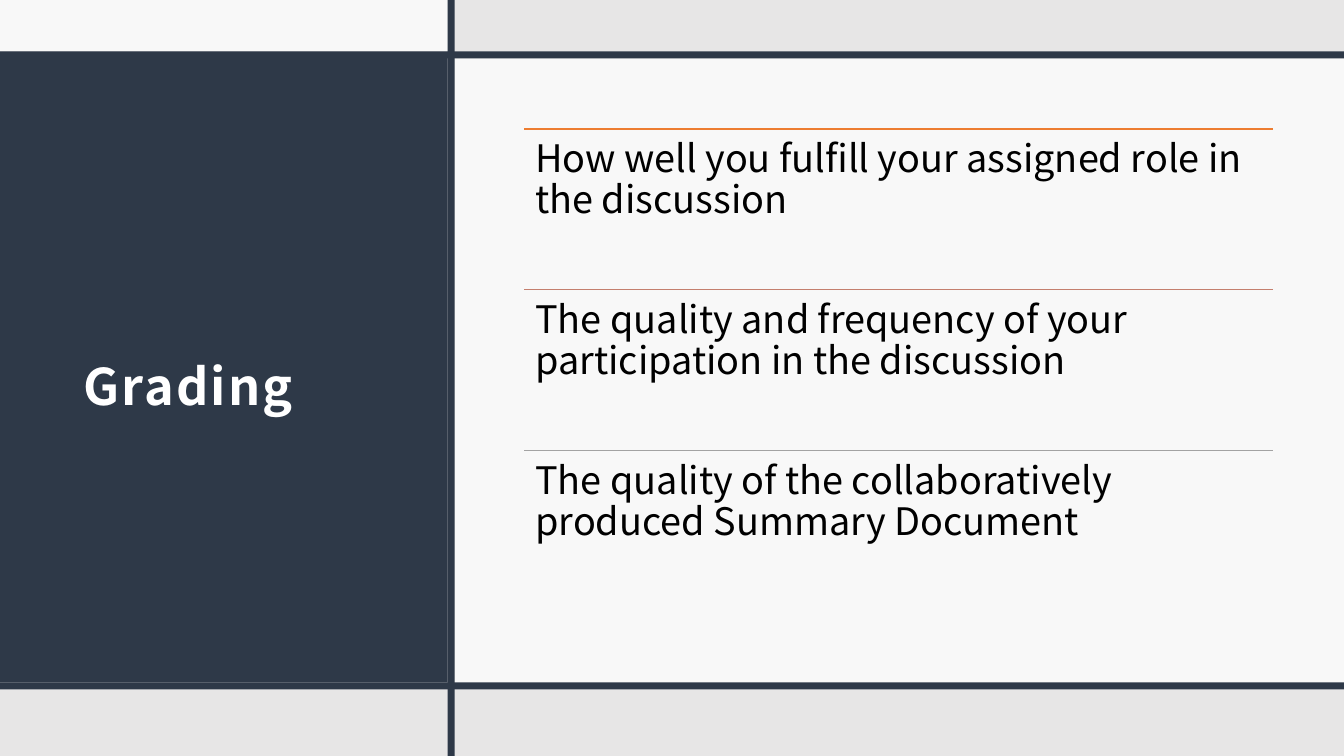
from pptx import Presentation
from pptx.dml.color import RGBColor
from pptx.enum.shapes import MSO_CONNECTOR, MSO_SHAPE
from pptx.enum.text import MSO_ANCHOR
from pptx.oxml.xmlchemy import OxmlElement
from pptx.util import Inches, Pt

COLORS = {
    "backdrop": "E7E6E6",
    "navy": "2E3948",
    "white": "FFFFFF",
    "black": "000000",
    "orange": "ED7D31",
    "rose": "C47F6E",
    "gray": "A3A3A3",
}
FONT = "Noto Sans CJK JP"
CRITERIA = [
    ("orange", "How well you fulfill your assigned role in the discussion"),
    ("rose", "The quality and frequency of your participation in the discussion"),
    ("gray", "The quality of the collaboratively produced Summary Document"),
]
CRITERIA_LEFT, CRITERIA_TOP = 5.2, 1.28
CRITERIA_WIDTH, CRITERIA_PITCH = 7.43, 1.595


def rgb(color):
    return RGBColor.from_string(COLORS[color])


def add_panel(slide, box, color, opacity=100):
    panel = slide.shapes.add_shape(MSO_SHAPE.RECTANGLE, *map(Inches, box))
    panel.shadow.inherit = False
    panel.line.fill.background()
    panel.fill.solid()
    panel.fill.fore_color.rgb = rgb(color)
    if opacity < 100:
        alpha = OxmlElement("a:alpha")
        alpha.set("val", str(opacity * 1000))
        panel.fill._xPr.find(".//{*}srgbClr").append(alpha)


def add_text(slide, box, text, size, color, inset, spacing):
    frame = slide.shapes.add_textbox(*map(Inches, box)).text_frame
    frame.word_wrap = True
    frame.margin_left = frame.margin_right = Inches(inset)
    frame.margin_top = frame.margin_bottom = Inches(inset)
    frame.text = text
    paragraph = frame.paragraphs[0]
    paragraph.line_spacing = spacing
    font = paragraph.runs[0].font
    font.name = FONT
    font.size = Pt(size)
    font.color.rgb = rgb(color)
    east_asian = OxmlElement("a:ea")
    east_asian.set("typeface", FONT)
    font._element.find("{*}latin").addnext(east_asian)
    return frame


def add_title(slide, text):
    frame = add_text(slide, (0.71, 1.31, 3.41, 4.71), text, 36, "white", 0.12, 1.5)
    frame.vertical_anchor = MSO_ANCHOR.MIDDLE
    frame.margin_bottom = Inches(0.1)
    font = frame.paragraphs[0].runs[0].font
    font.bold = True
    font._element.set("spc", "150")


def add_rule(slide, left, top, width, color):
    rule = slide.shapes.add_connector(
        MSO_CONNECTOR.STRAIGHT,
        Inches(left), Inches(top), Inches(left + width), Inches(top),
    )
    rule.line.color.rgb = rgb(color)
    rule.line.width = Pt(1)
    rule._element.spPr.append(OxmlElement("a:effectLst"))


def add_criterion(slide, index, color, text):
    top = CRITERIA_TOP + index * CRITERIA_PITCH
    add_rule(slide, CRITERIA_LEFT, top, CRITERIA_WIDTH, color)
    box = (CRITERIA_LEFT, top, CRITERIA_WIDTH, CRITERIA_PITCH)
    add_text(slide, box, text, 27, "black", 0.11, 0.9)


def main():
    deck = Presentation()
    deck.slide_width, deck.slide_height = Inches(13.33), Inches(7.5)
    slide = deck.slides.add_slide(deck.slide_layouts[6])
    slide.background.fill.solid()
    slide.background.fill.fore_color.rgb = rgb("backdrop")

    add_panel(slide, (0, 0.51, 4.44, 6.26), "navy")
    add_title(slide, "Grading")
    add_panel(slide, (0, 0, 4.44, 0.55), "white", 75)
    add_panel(slide, (4.51, 0.58, 8.82, 6.22), "white", 75)
    add_panel(slide, (0, 6.77, 13.33, 0.07), "navy")
    add_panel(slide, (4.44, 0, 0.07, 7.5), "navy")
    add_panel(slide, (0, 0.51, 13.33, 0.07), "navy")
    for index, (color, text) in enumerate(CRITERIA):
        add_criterion(slide, index, color, text)

    deck.save("out.pptx")


if __name__ == "__main__":
    main()
